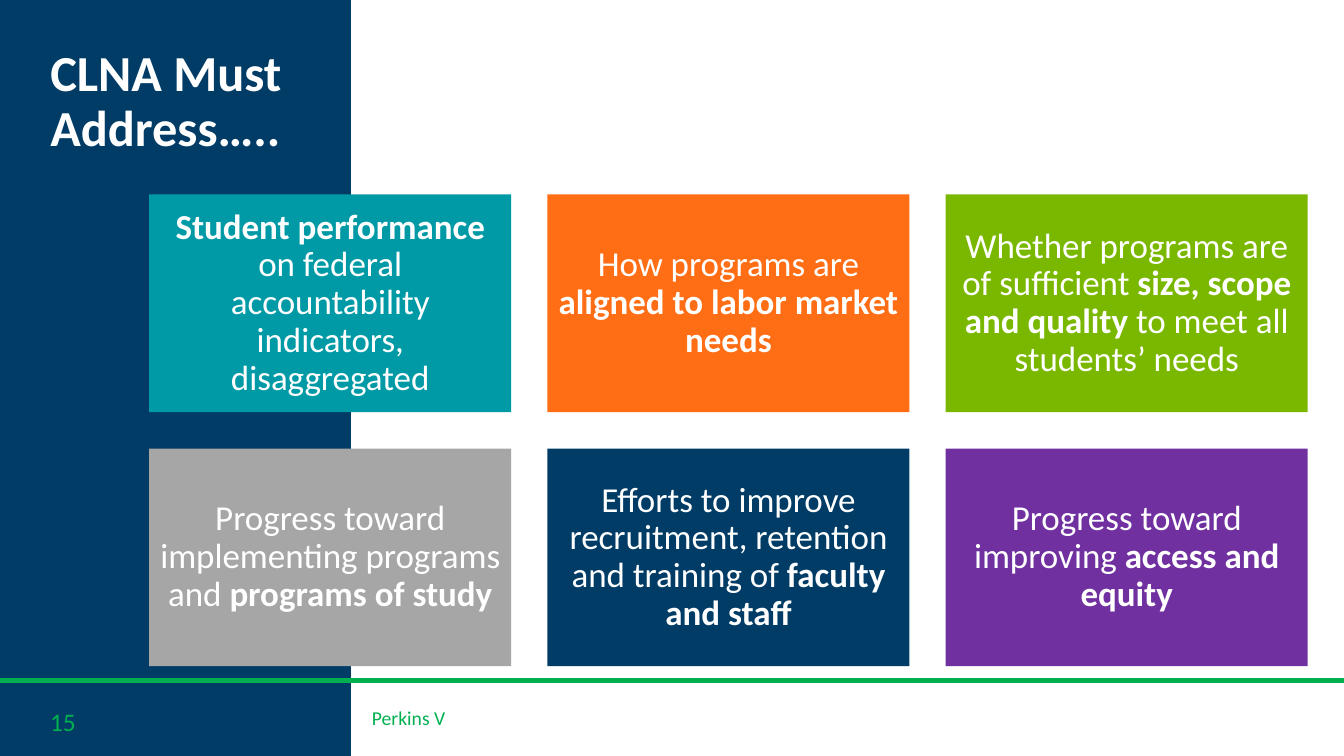
from pptx import Presentation
from pptx.dml.color import RGBColor
from pptx.enum.shapes import MSO_CONNECTOR, MSO_SHAPE
from pptx.enum.text import MSO_ANCHOR, PP_ALIGN
from pptx.oxml.ns import qn
from pptx.util import Inches, Pt
from lxml.etree import SubElement

NAVY = RGBColor(0x00, 0x3C, 0x66)
GREEN = RGBColor(0x00, 0xB0, 0x50)
WHITE = RGBColor(0xFF, 0xFF, 0xFF)
TEAL = RGBColor(0x00, 0x9A, 0xA6)
ORANGE = RGBColor(0xFF, 0x6D, 0x14)
LIME = RGBColor(0x7A, 0xB8, 0x00)
GRAY = RGBColor(0xA6, 0xA6, 0xA6)
PURPLE = RGBColor(0x70, 0x30, 0xA0)

# Content: each card is a fill and its (text, bold) runs
TITLE = "CLNA Must Address….."
FOOTER = "Perkins V"
PAGE = "15"
CARDS = [
    (TEAL, [("Student performance ", True),
            ("on federal accountability indicators, disaggregated", False)]),
    (ORANGE, [("How programs are ", False),
              ("aligned to labor market needs", True)]),
    (LIME, [("Whether programs are of sufficient ", False),
            ("size, scope and quality ", True),
            ("to meet all students’ needs", False)]),
    (GRAY, [("Progress toward implementing programs and ", False),
            ("programs of study", True)]),
    (NAVY, [("Efforts to improve recruitment, retention and training of ", False),
            ("faculty and staff", True)]),
    (PURPLE, [("Progress toward improving ", False),
              ("access and equity", True)]),
]

# Card grid, in inches
COLUMNS = 3
LEFT, TOP = 1.48, 1.93
CARD_W, CARD_H = 3.59, 2.16
GAP = 0.36


def add_block(s, x, y, w, h, fill):
    sp = s.shapes.add_shape(MSO_SHAPE.RECTANGLE, Inches(x), Inches(y),
                            Inches(w), Inches(h))
    sp.shadow.inherit = False
    sp.fill.solid()
    sp.fill.fore_color.rgb = fill
    sp.line.fill.background()
    return sp


def write(tf, runs, size, color, spacing=1.0, align=PP_ALIGN.LEFT):
    tf.word_wrap = True
    p = tf.paragraphs[0]
    p.alignment = align
    p.line_spacing = spacing
    for text, bold in runs:
        r = p.add_run()
        r.text = text
        r.font.name = "Calibri"
        r.font.size = Pt(size)
        r.font.bold = bold
        r.font.color.rgb = color


def add_text(s, x, y, w, h, text, size, color, bold=False, spacing=1.0):
    box = s.shapes.add_textbox(Inches(x), Inches(y), Inches(w), Inches(h))
    write(box.text_frame, [(text, bold)], size, color, spacing)
    return box


prs = Presentation()
prs.slide_width, prs.slide_height = Inches(13.33), Inches(7.5)
s = prs.slides.add_slide(prs.slide_layouts[6])

# Side panel, footer and rule
add_block(s, 0, 0, 3.48, 7.5, NAVY)
footer = add_text(s, 3.59, 6.95, 4.11, 0.4, FOOTER, 14, GREEN)
footer.text_frame.margin_right = 0
rule = s.shapes.add_connector(MSO_CONNECTOR.STRAIGHT, Inches(13.33), Inches(6.75),
                              0, Inches(6.75))
rule.line.color.rgb = GREEN
rule.line.width = Pt(3)
SubElement(rule._element.spPr, qn("a:effectLst"))

# Title and page number
add_text(s, 0.4, 0.43, 3.09, 2, TITLE, 36, WHITE, bold=True, spacing=0.9)
add_text(s, 0.4, 6.96, 2.17, 0.4, PAGE, 18, GREEN)

# Cards
for i, (fill, runs) in enumerate(CARDS):
    row, col = divmod(i, COLUMNS)
    card = add_block(s, LEFT + col * (CARD_W + GAP), TOP + row * (CARD_H + GAP),
                     CARD_W, CARD_H, fill)
    tf = card.text_frame
    tf.margin_left = tf.margin_right = Inches(0.1)
    tf.margin_top = tf.margin_bottom = Inches(0.1)
    tf.vertical_anchor = MSO_ANCHOR.MIDDLE
    write(tf, runs, 25, WHITE, 0.9, PP_ALIGN.CENTER)

prs.save("out.pptx")
